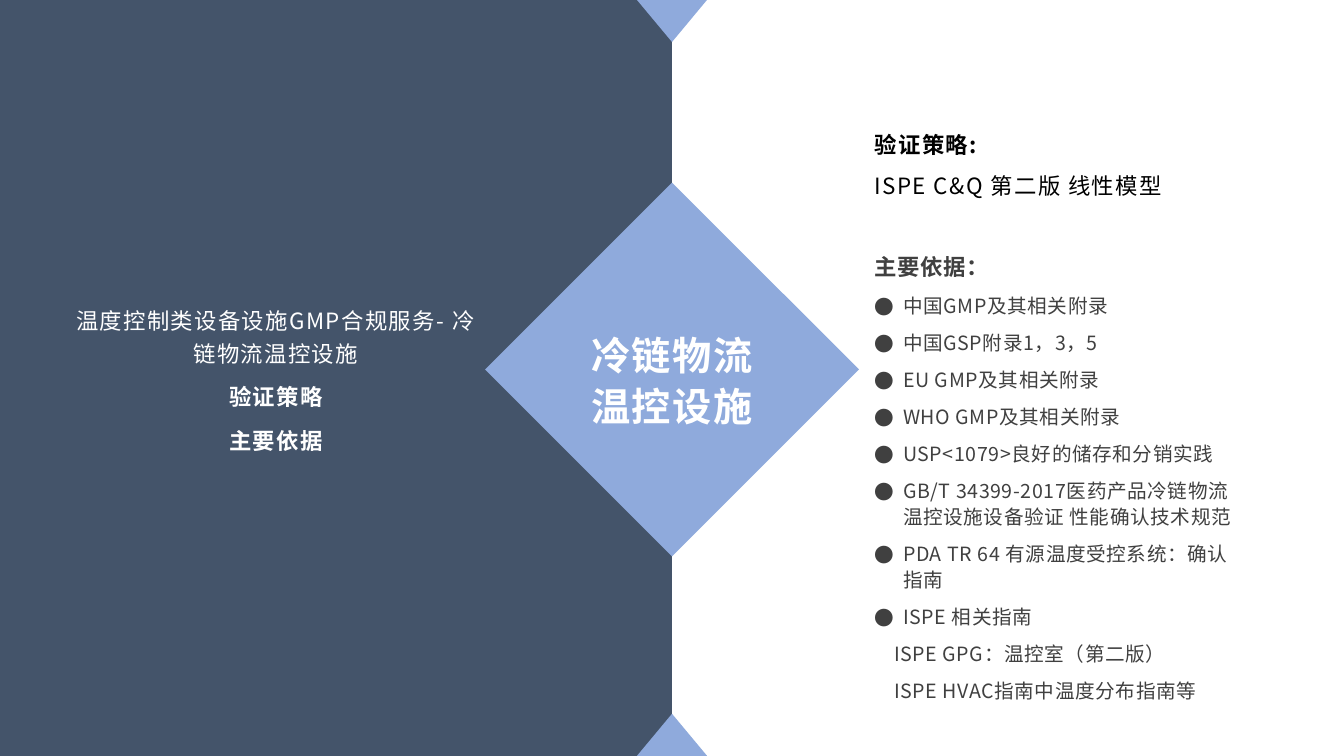
from pptx import Presentation
from pptx import util as u
from pptx.dml.color import RGBColor
from pptx.enum import shapes, text
from pptx.oxml import parse_xml
from pptx.oxml.ns import nsdecls

COLUMNS, ROWS = 80, 45
NAVY, PERIWINKLE, WHITE, BLACK, GRAY = "44546A", "8FAADC", "FFFFFF", "000000", "404040"
FONT = "Noto Sans CJK SC"


def color(value):
    return RGBColor.from_string(value)


def element(tag, **attributes):
    pairs = " ".join(f'{name}="{value}"' for name, value in attributes.items())
    return parse_xml(f'<a:{tag} {nsdecls("a")} {pairs}/>')


def line(words, **options):
    return words, options


def fill_para(para, words, size, fill, bold=False, spacing=1, leading=1.1,
              before=0, after=8, indent=0, bullet=None, align=text.PP_ALIGN.LEFT):
    properties = para._p.get_or_add_pPr()
    properties.set("marL", str(u.Inches(indent)))
    properties.set("indent", str(-u.Inches(indent) if bullet else 0))
    if bullet:
        properties.append(element("buFont", typeface=FONT))
        properties.append(element("buChar", char=bullet))
    para.alignment = align
    para.line_spacing = leading
    para.space_before, para.space_after = u.Pt(before), u.Pt(after)
    span = para.add_run()
    span.text = words
    span.font.name, span.font.size, span.font.bold = FONT, u.Pt(size), bold
    span.font.color.rgb = color(fill)
    run_properties = span._r.get_or_add_rPr()
    run_properties.set("spc", str(round(spacing * 100)))
    run_properties.append(element("ea", typeface=FONT))


class SplitSlide:
    """A slide laid out on a grid of equal square cells, with its text style."""

    def __init__(self, deck):
        self.page = deck.slides.add_slide(deck.slide_layouts[6])
        self.cell = deck.slide_width / COLUMNS

    def place(self, *cells):
        return [u.Emu(round(count * self.cell)) for count in cells]

    def shape(self, kind, left, top, width, height, fill, rotation=0):
        shape = self.page.shapes.add_shape(kind, *self.place(left, top, width, height))
        shape.shadow.inherit = False
        shape.fill.solid()
        shape.fill.fore_color.rgb = color(fill)
        shape.line.fill.background()
        shape.rotation = rotation

    def text(self, left, top, width, height, lines, **style):
        box = self.page.shapes.add_textbox(*self.place(left, top, width, height))
        frame = box.text_frame
        frame.word_wrap = True
        frame.vertical_anchor = text.MSO_ANCHOR.MIDDLE
        frame.margin_left = frame.margin_right = u.Inches(0.07)
        frame.margin_top = frame.margin_bottom = u.Inches(0.03)
        for index, (words, options) in enumerate(lines):
            para = frame.add_paragraph() if index else frame.paragraphs[0]
            fill_para(para, words, **{**style, **options})


def main():
    deck = Presentation()
    deck.slide_width, deck.slide_height = u.Inches(13.33), u.Inches(7.5)
    slide = SplitSlide(deck)
    kinds = shapes.MSO_SHAPE
    middle = COLUMNS / 2

    slide.shape(kinds.RECTANGLE, 0, 0, middle, ROWS, NAVY)
    width, height = 4.16, 2.5
    for top, rotation in ((0, 180), (ROWS - height, 0)):
        slide.shape(kinds.ISOSCELES_TRIANGLE, middle - width / 2, top,
                    width, height, PERIWINKLE, rotation)
    side = 22.26
    slide.shape(kinds.DIAMOND, middle - side / 2, 22 - side / 2, side, side, PERIWINKLE)

    center = text.PP_ALIGN.CENTER
    slide.text(middle - 7.75, 16, 15.5, 13, [line("冷链物流"), line("温控设施")],
               size=28, fill=WHITE, bold=True, spacing=1.2, after=0, align=center)
    slide.text(4, 7, 24.84, 31, [
        line("温度控制类设备设施GMP合规服务- 冷链物流温控设施"),
        line("验证策略", bold=True),
        line("主要依据", bold=True),
    ], size=16, fill=WHITE, leading=1.2, align=center)

    references = [
        "中国GMP及其相关附录",
        "中国GSP附录1，3，5",
        "EU GMP及其相关附录",
        "WHO GMP及其相关附录",
        "USP<1079>良好的储存和分销实践",
        "GB/T 34399-2017医药产品冷链物流温控设施设备验证 性能确认技术规范",
        "PDA TR 64 有源温度受控系统：确认指南",
        "ISPE 相关指南",
    ]
    guides = ["ISPE GPG：温控室（第二版）", "ISPE HVAC指南中温度分布指南等"]
    slide.text(51.66, 7, 23, 35.5, [
        line("验证策略:", size=16, fill=BLACK, bold=True, spacing=1),
        line("ISPE C&Q 第二版 线性模型", size=16, fill=BLACK, spacing=1),
        line("主要依据：", size=16, bold=True, before=29),
        *(line(words, indent=0.28, bullet="●") for words in references),
        *(line(words, indent=0.19) for words in guides),
    ], size=14, fill=GRAY, spacing=0.4)

    deck.save("out.pptx")


if __name__ == "__main__":
    main()
